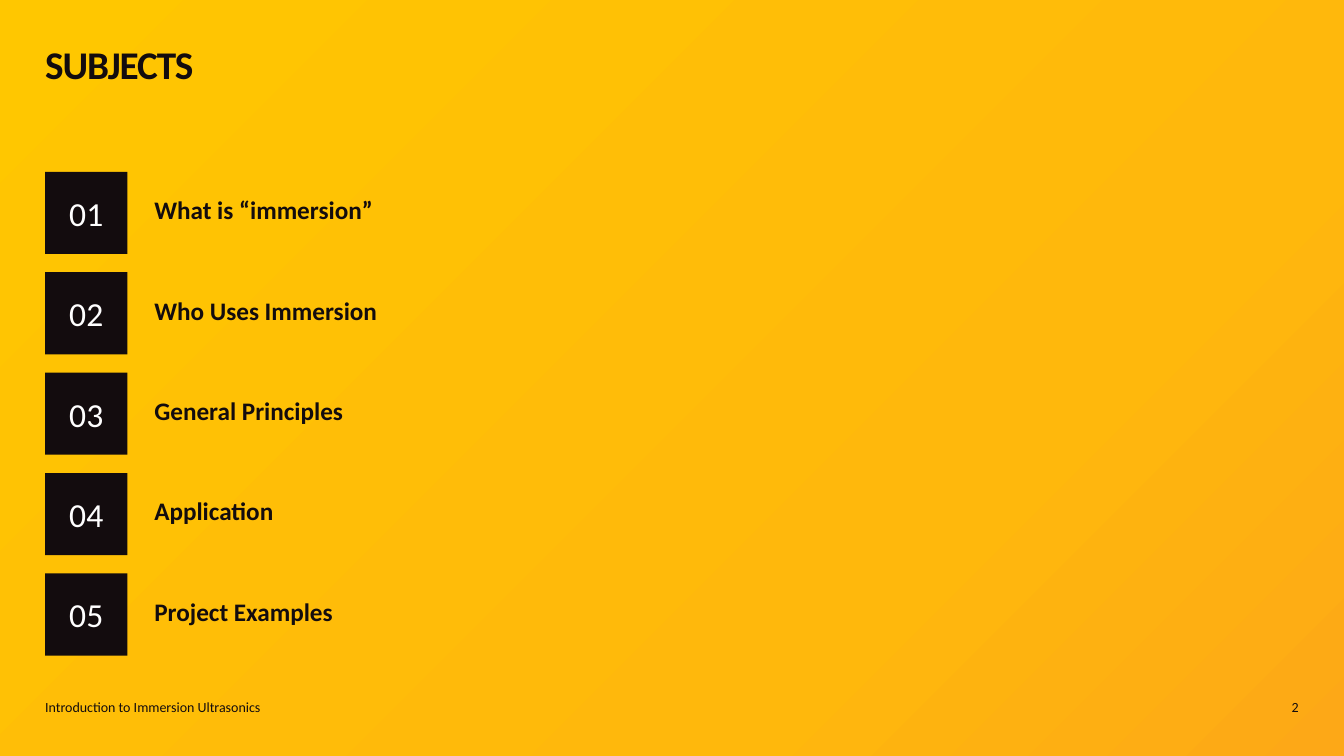
from copy import deepcopy

from pptx import Presentation
from pptx.dml.color import RGBColor
from pptx.enum.shapes import MSO_SHAPE as Shape
from pptx.enum.text import MSO_ANCHOR as Anchor, PP_ALIGN as Align
from pptx.util import Cm, Pt

COLORS = {
    "ink": "130C0E",
    "white": "FFFFFF",
    "yellow": "FFC700",
    "amber": "FFB80C",
    "orange": "FDA817",
}
WIDTH, HEIGHT = 33.87, 19.05
MARGIN = 1.14


def rgb(name):
    return RGBColor.from_string(COLORS[name])


class SlideBuilder:
    """Holds the shared style and the slide being filled."""

    font = {"name": "Calibri", "bold": False}
    frame = {"word_wrap": True, "margin_left": 0, "margin_top": 0,
             "margin_right": 0, "margin_bottom": 0}

    def __init__(self, slide):
        self.slide = slide

    def set_text(self, shape, text, size, color="ink", bold=False, align=Align.LEFT,
                 anchor=Anchor.MIDDLE, line_spacing=1.0, tracking=None):
        frame = shape.text_frame
        for key, value in {**self.frame, "vertical_anchor": anchor}.items():
            setattr(frame, key, value)
        paragraph = frame.paragraphs[0]
        for key, value in {"alignment": align, "line_spacing": line_spacing}.items():
            setattr(paragraph, key, value)
        run = paragraph.add_run()
        run.text = text
        for key, value in {**self.font, "size": Pt(size), "bold": bold}.items():
            setattr(run.font, key, value)
        run.font.color.rgb = rgb(color)
        if tracking is not None:
            run._r.get_or_add_rPr().set("spc", str(round(tracking * 100)))

    def text(self, box, text, size, **style):
        label = self.slide.shapes.add_textbox(*map(Cm, box))
        self.set_text(label, text, size, **style)

    def rectangle(self, box):
        shape = self.slide.shapes.add_shape(Shape.RECTANGLE, *map(Cm, box))
        shape.shadow.inherit = False
        shape.line.fill.background()
        return shape

    def gradient(self, box, stops, angle):
        fill = self.rectangle(box).fill
        fill.gradient()
        fill.gradient_angle = angle
        # The default gradient has two stops, so one more is cloned
        first = fill.gradient_stops[0]._gs
        first.addnext(deepcopy(first))
        for stop, (position, color) in zip(fill.gradient_stops, stops):
            stop.position = position
            stop.color.rgb = rgb(color)

    def number_tile(self, box, number):
        tile = self.rectangle(box)
        tile.fill.solid()
        tile.fill.fore_color.rgb = rgb("ink")
        self.set_text(tile, f"{number:02d}", 24, color="white", align=Align.CENTER)


def main():
    deck = Presentation()
    deck.slide_width, deck.slide_height = Cm(WIDTH), Cm(HEIGHT)
    page = SlideBuilder(deck.slides.add_slide(deck.slide_layouts[6]))

    # Background
    page.gradient((0, 0, WIDTH, HEIGHT),
                  [(0, "yellow"), (0.7, "amber"), (1, "orange")], angle=315)

    # Title
    page.text((MARGIN, 1.25, 29.85, 2), "SUBJECTS", 28, bold=True,
              anchor=Anchor.TOP, line_spacing=0.8, tracking=-0.8)

    # Numbered subjects
    subjects = ["What is “immersion”", "Who Uses Immersion", "General Principles",
                "Application", "Project Examples"]
    first_top, pitch, tile_size, subject_height = 4.33, 2.53, 2.07, 1.55
    for index, subject in enumerate(subjects):
        top = first_top + index * pitch
        page.number_tile((MARGIN, top, tile_size, tile_size), index + 1)
        subject_top = top + (tile_size - subject_height) / 2
        page.text((3.89, subject_top, 14.38, subject_height), subject, 18,
                  bold=True, line_spacing=0.75)

    # Footer
    footer_top, footer_height, number_width = 17.63, 0.38, 2.11
    page.text((MARGIN, footer_top, 11.63, footer_height),
              "Introduction to Immersion Ultrasonics", 10)
    page.text((WIDTH - MARGIN - number_width, footer_top, number_width, footer_height),
              "2", 10, align=Align.RIGHT)

    deck.save("out.pptx")


if __name__ == "__main__":
    main()
